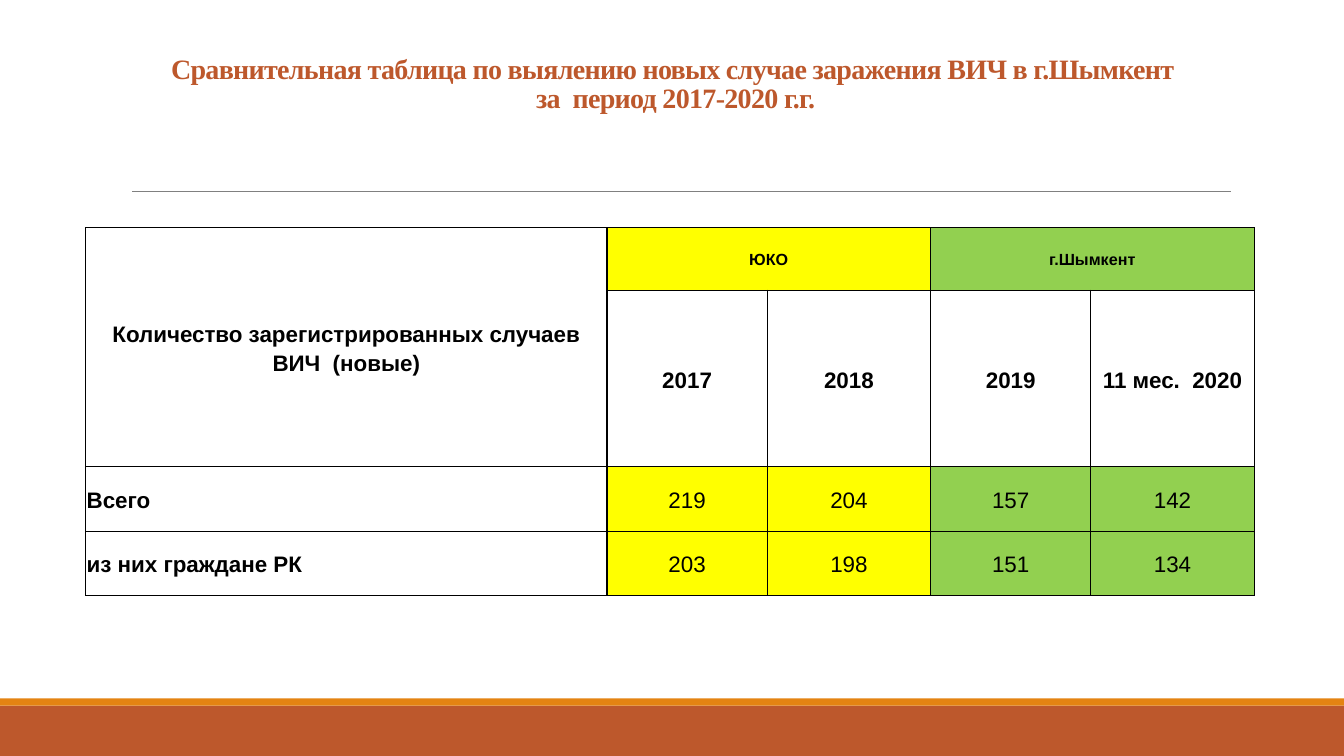
import pptx
import pptx.dml.color
import pptx.enum.shapes
import pptx.enum.text
import pptx.oxml
import pptx.oxml.ns
import pptx.util
from lxml import etree
from pptx.util import Inches

ALIGN = pptx.enum.text.PP_ALIGN
ANCHOR = pptx.enum.text.MSO_ANCHOR
RUST, ORANGE, GRAY, BLACK = "BD582C", "E48312", "808080", "000000"
YELLOW, GREEN = "FFFF00", "92D050"


def rgb(value):
    return pptx.dml.color.RGBColor.from_string(value)


class SlideBuilder:
    def __init__(self, prs, title_font, body_font):
        self.s = prs.slides.add_slide(prs.slide_layouts[5])
        self.title_font = title_font
        self.body_font = body_font

    def format_text(self, tf, font, size, color, bold, align, spacing):
        for p in tf.paragraphs:
            p.alignment = align
            p.line_spacing = spacing
            for r in p.runs:
                r.font.name = font
                r.font.size = pptx.util.Pt(size)
                r.font.bold = bold
                r.font.color.rgb = rgb(color)

    def bar(self, x, y, w, h, color):
        sp = self.s.shapes.add_shape(
            pptx.enum.shapes.MSO_SHAPE.RECTANGLE,
            Inches(x), Inches(y), Inches(w), Inches(h))
        sp.shadow.inherit = False
        sp.fill.solid()
        sp.fill.fore_color.rgb = rgb(color)
        sp.line.fill.background()

    def rule(self, x1, x2, y, color, width):
        line = self.s.shapes.add_connector(
            pptx.enum.shapes.MSO_CONNECTOR.STRAIGHT,
            Inches(x1), Inches(y), Inches(x2), Inches(y))
        line.line.color.rgb = rgb(color)
        line.line.width = pptx.util.Pt(width)
        etree.SubElement(line._element.spPr, pptx.oxml.ns.qn("a:effectLst"))

    def title(self, text, x, y, w, h):
        sp = self.s.shapes.title
        sp.left, sp.top, sp.width, sp.height = map(Inches, (x, y, w, h))
        tf = sp.text_frame
        tf.text = text
        tf.word_wrap = True
        tf.auto_size = pptx.enum.text.MSO_AUTO_SIZE.NONE
        tf.vertical_anchor = ANCHOR.BOTTOM
        self.format_text(tf, self.title_font, 20, RUST, True, ALIGN.CENTER, 0.85)
        for r in tf.paragraphs[0].runs:
            r.font._element.set("spc", "-50")

    def table(self, x, y, cols, rows):
        table = self.s.shapes.add_table(
            len(rows), len(cols), Inches(x), Inches(y),
            Inches(sum(cols)), Inches(sum(rows))).table
        table.first_row = table.horz_banding = False
        for column, width in zip(table.columns, cols):
            column.width = Inches(width)
        for row, height in zip(table.rows, rows):
            row.height = Inches(height)
        return table

    def cell(self, cell, text, fill=None, size=16, bold=True, align=ALIGN.CENTER):
        cell.text = text
        cell.vertical_anchor = ANCHOR.MIDDLE
        cell.margin_left = cell.margin_right = Inches(0.01)
        cell.margin_top = cell.margin_bottom = Inches(0.01)
        self.format_text(cell.text_frame, self.body_font, size, BLACK, bold, align, 1.15)
        self.borders(cell)
        if fill:
            cell.fill.solid()
            cell.fill.fore_color.rgb = rgb(fill)
        else:
            cell.fill.background()

    def borders(self, cell):
        tc_pr = cell._tc.get_or_add_tcPr()
        for side in ("lnL", "lnR", "lnT", "lnB"):
            tc_pr.append(pptx.oxml.parse_xml(
                f'<a:{side} {pptx.oxml.ns.nsdecls("a")} w="12700"><a:solidFill>'
                f'<a:srgbClr val="{BLACK}"/></a:solidFill></a:{side}>'))


def main():
    prs = pptx.Presentation()
    prs.slide_width, prs.slide_height = Inches(13.33), Inches(7.5)
    slide = SlideBuilder(prs, "Times New Roman", "Arial")

    slide.bar(0, 7, 13.33, 0.5, RUST)
    slide.bar(0, 6.93, 13.33, 0.07, ORANGE)
    slide.rule(1.31, 12.21, 1.9, GRAY, 0.5)
    slide.title("Сравнительная таблица по выялению новых случае заражения ВИЧ в г.Шымкент \v"
                "за  период 2017-2020 г.г.", 1.2, 0.57, 11, 0.61)

    cases = [
        ["Количество зарегистрированных случаев ВИЧ  (новые)", "ЮКО", "", "г.Шымкент", ""],
        ["", "2017", "2018", "2019", "11 мес.  2020"],
        ["Всего", "219", "204", "157", "142"],
        ["из них граждане РК", "203", "198", "151", "134"],
    ]
    region_fills = [None, YELLOW, YELLOW, GREEN, GREEN]
    table = slide.table(0.85, 2.26, [5.17, 1.59, 1.62, 1.59, 1.62],
                        [0.62, 1.75, 0.64, 0.64])
    for i, row in enumerate(cases):
        for j, text in enumerate(row):
            label, data = j == 0, i > 1
            slide.cell(table.cell(i, j), text,
                       fill=None if i == 1 else region_fills[j],
                       size=11.5 if i == 0 and not label else 16,
                       bold=label or not data,
                       align=ALIGN.LEFT if label and data else ALIGN.CENTER)
    for first, last in (((0, 0), (1, 0)), ((0, 1), (0, 2)), ((0, 3), (0, 4))):
        table.cell(*first).merge(table.cell(*last))

    prs.save("out.pptx")


if __name__ == "__main__":
    main()
